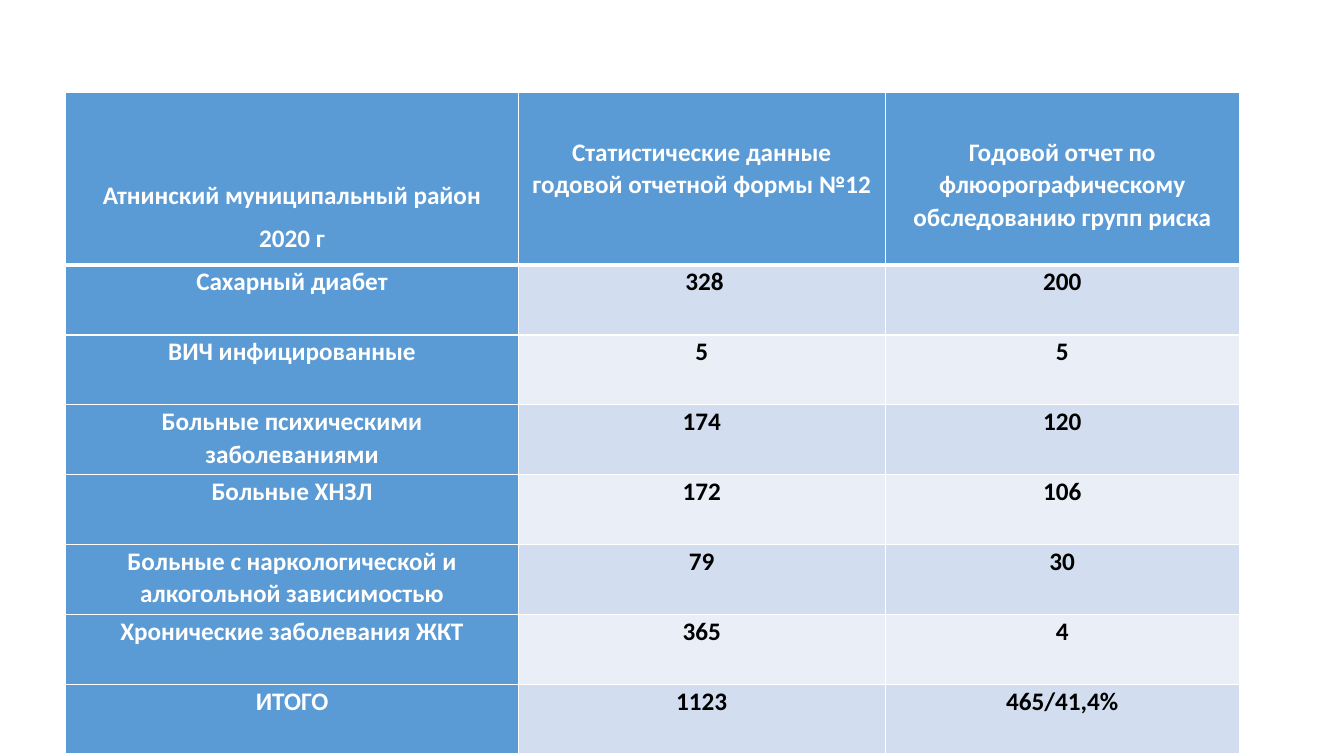
from dataclasses import dataclass

from lxml.etree import SubElement
from pptx import Presentation
from pptx.dml.color import RGBColor
from pptx.enum.text import PP_ALIGN as Align
from pptx.oxml.ns import qn
from pptx.util import Cm, Pt


@dataclass(frozen=True)
class Theme:
    font: str = "Calibri"
    size: int = 18
    accent: str = "5B9BD5"
    odd_band: str = "D2DEEF"
    even_band: str = "EAEFF7"
    light: str = "FFFFFF"
    dark: str = "000000"


def set_border(cell, side, width):
    line = SubElement(cell._tc.get_or_add_tcPr(), qn(f"a:{side}"), w=str(Pt(width)))
    fill = SubElement(line, qn("a:solidFill"))
    SubElement(fill, qn("a:srgbClr"), val=theme.light)


theme = Theme()
column_widths = [11.4, 9.25, 8.92]
header_height, row_height = 4.34, 1.76
header_offsets = [2.15, 1.07, 1.07]
rows = [
    (
        "Атнинский муниципальный район\n2020 г",
        "Статистические данные годовой отчетной формы №12",
        "Годовой отчет по флюорографическому обследованию групп риска",
    ),
    ("Сахарный диабет", " 328", "200"),
    ("ВИЧ инфицированные", "5", "5"),
    ("Больные психическими заболеваниями", "174", "120"),
    ("Больные ХНЗЛ", "172", "106"),
    ("Больные с наркологической и алкогольной зависимостью", "79", "30"),
    ("Хронические заболевания ЖКТ", "365", "4"),
    ("ИТОГО", "1123", "465/41,4%"),
]

presentation = Presentation()
presentation.slide_width = Cm(33.87)
presentation.slide_height = Cm(19.05)
slide = presentation.slides.add_slide(presentation.slide_layouts[6])

table_height = header_height + row_height * (len(rows) - 1)
table = slide.shapes.add_table(
    len(rows), len(column_widths),
    Cm(1.66), Cm(2.34), Cm(sum(column_widths)), Cm(table_height),
).table
table.first_col = True
for column, width in zip(table.columns, column_widths):
    column.width = Cm(width)

for row_index, values in enumerate(rows):
    is_header = row_index == 0
    table.rows[row_index].height = Cm(header_height if is_header else row_height)
    for column_index, value in enumerate(values):
        cell = table.cell(row_index, column_index)
        is_heading = is_header or column_index == 0
        band = theme.odd_band if row_index % 2 else theme.even_band

        for side in ("lnL", "lnR", "lnT", "lnB"):
            at_header_edge = (row_index, side) in ((0, "lnB"), (1, "lnT"))
            set_border(cell, side, 3 if at_header_edge else 1)
        cell.fill.solid()
        cell.fill.fore_color.rgb = RGBColor.from_string(theme.accent if is_heading else band)

        cell.margin_left = cell.margin_right = Cm(0.18)
        cell.margin_top = Cm(header_offsets[column_index] if is_header else 0)
        cell.margin_bottom = Cm(0)
        cell.text_frame.text = value
        for paragraph in cell.text_frame.paragraphs:
            paragraph.alignment = Align.CENTER
            paragraph.line_spacing = 1.06
            paragraph.space_after = Pt(8)
            paragraph.font.name = theme.font
            paragraph.font.size = Pt(theme.size)
            paragraph.font.bold = True
            paragraph.font.color.rgb = RGBColor.from_string(theme.light if is_heading else theme.dark)

presentation.save("out.pptx")
